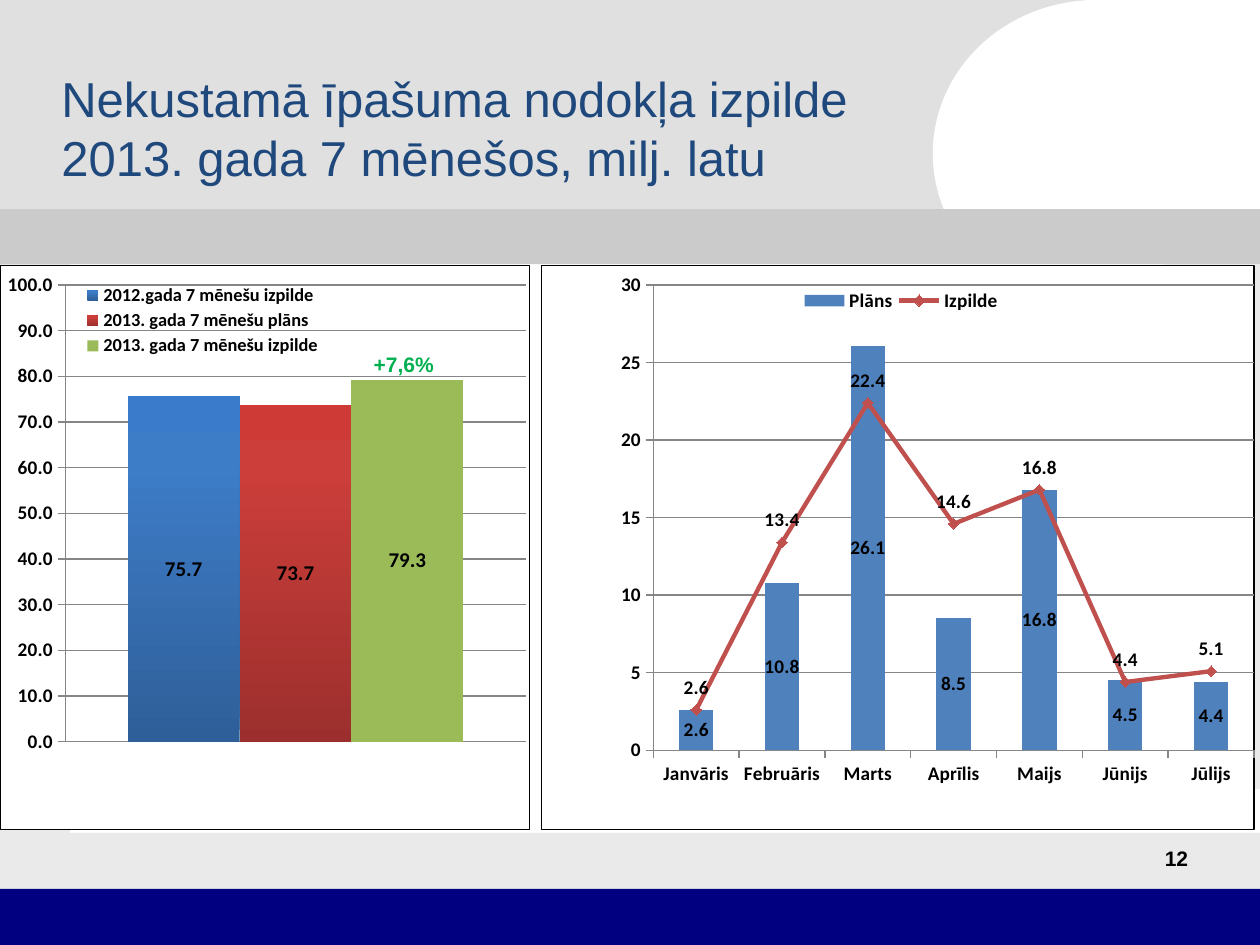
from copy import deepcopy

from pptx import Presentation
from pptx.chart.data import CategoryChartData
from pptx.dml.color import RGBColor
from pptx.enum.chart import (XL_CHART_TYPE, XL_LABEL_POSITION, XL_LEGEND_POSITION,
                             XL_MARKER_STYLE, XL_TICK_MARK)
from pptx.enum.shapes import MSO_SHAPE
from pptx.enum.text import MSO_ANCHOR, PP_ALIGN
from pptx.oxml import parse_xml
from pptx.oxml.ns import nsdecls, qn
from pptx.util import Pt


def color(value):
    return RGBColor.from_string(value)


def layout(left, top, width, height, target=""):
    return parse_xml(
        f'<c:layout {nsdecls("c")}><c:manualLayout>{target}'
        '<c:xMode val="edge"/><c:yMode val="edge"/>'
        f'<c:x val="{left}"/><c:y val="{top}"/><c:w val="{width}"/><c:h val="{height}"/>'
        '</c:manualLayout></c:layout>')


deck = Presentation()
deck.slide_width, deck.slide_height = Pt(720), Pt(540)
page = deck.slides.add_slide(deck.slide_layouts[6])

backdrop = [
    (MSO_SHAPE.RECTANGLE, 0, 0, 654.5, 121.5, "E0E0E0"),
    (MSO_SHAPE.OVAL, 533, 0, 187, 175.5, "FFFFFF"),
    (MSO_SHAPE.RECTANGLE, 0, 151, 40, 357, "EAEAEA"),
    (MSO_SHAPE.RECTANGLE, 19, 476, 701, 32, "EAEAEA"),
    (MSO_SHAPE.RECTANGLE, 0, 508, 720, 32, "000080"),
    (MSO_SHAPE.RECTANGLE, 665, 151, 55, 300, "EAEAEA"),
    (MSO_SHAPE.RECTANGLE, 620.5, 0, 99.5, 145.5, "FFFFFF"),
    (MSO_SHAPE.RECTANGLE, 0, 119.5, 720, 31.5, "CBCBCB"),
]
for kind, left, top, width, height, fill in backdrop:
    shape = page.shapes.add_shape(kind, Pt(left), Pt(top), Pt(width), Pt(height))
    shape.shadow.inherit = False
    shape.fill.solid()
    shape.fill.fore_color.rgb = color(fill)
    shape.line.fill.background()

year_data = CategoryChartData(number_format="0.0")
year_data.categories = ["1"]
year_data.add_series("2012.gada 7 mēnešu izpilde", [75.7])
year_data.add_series("2013. gada 7 mēnešu plāns", [73.7])
year_data.add_series("2013. gada 7 mēnešu izpilde", [79.3])

month_data = CategoryChartData(number_format="General")
month_data.categories = ["Janvāris", "Februāris", "Marts", "Aprīlis", "Maijs", "Jūnijs", "Jūlijs"]
month_data.add_series("Plāns", [2.6, 10.8, 26.1, 8.5, 16.8, 4.5, 4.4])
month_data.add_series("Izpilde", [2.6, 13.4, 22.4, 14.6, 16.8, 4.4, 5.1])

chart_specs = [
    (year_data, (0, 151.25, 303, 323), 112, 100, 10, "0.0", 10.5,
     (0.122, 0.035, 0.871, 0.81), (0.147, 0.028, 0.47, 0.14)),
    (month_data, (309, 151.25, 408, 323), 150, 30, 5, "General", 11,
     (0.157, 0.035, 0.843, 0.825), (0.36, 0.035, 0.29, 0.055)),
]
charts = []
for data, place, gap, top_value, step, number_format, legend_size, plot_place, legend_place in chart_specs:
    chart = page.shapes.add_chart(
        XL_CHART_TYPE.COLUMN_CLUSTERED, *[Pt(length) for length in place], data).chart
    charts.append(chart)
    chart.has_title = False
    chart.font.name = "Calibri"
    chart.font.size = Pt(11)
    chart.font.bold = True
    chart.font.color.rgb = color("000000")
    chart.plots[0].gap_width = gap
    chart.plots[0].vary_by_categories = False
    chart.has_legend = True
    chart.legend.position = XL_LEGEND_POSITION.BOTTOM
    chart.legend.include_in_layout = True
    chart.legend.font.size = Pt(legend_size)
    for old_layout in chart.legend._element.findall(qn("c:layout")):
        chart.legend._element.remove(old_layout)
    chart.legend._element.find(qn("c:overlay")).addprevious(layout(*legend_place))
    chart.value_axis.minimum_scale = 0
    chart.value_axis.maximum_scale = top_value
    chart.value_axis.major_unit = step
    chart.value_axis.tick_labels.number_format = number_format
    chart.value_axis.tick_labels.number_format_is_linked = False
    chart.value_axis.has_major_gridlines = True
    for line in (chart.value_axis.major_gridlines.format.line,
                 chart.value_axis.format.line, chart.category_axis.format.line):
        line.color.rgb = color("868686")
        line.width = Pt(0.75)
    for axis in (chart.value_axis, chart.category_axis):
        axis.major_tick_mark = XL_TICK_MARK.OUTSIDE
        axis.minor_tick_mark = XL_TICK_MARK.NONE
    plot_area = chart._chartSpace.chart.plotArea
    for old_layout in plot_area.findall(qn("c:layout")):
        plot_area.remove(old_layout)
    plot_area.insert(0, layout(*plot_place, '<c:layoutTarget val="inner"/>'))
    chart._chartSpace.chart.addnext(parse_xml(
        f'<c:spPr {nsdecls("c", "a")}><a:solidFill><a:srgbClr val="FFFFFF"/></a:solidFill>'
        '<a:ln w="9525"><a:solidFill><a:srgbClr val="000000"/></a:solidFill></a:ln></c:spPr>'))

year_chart, month_chart = charts
year_chart.category_axis.visible = False

bar_plot = month_chart._chartSpace.chart.plotArea.find(qn("c:barChart"))
line_plot = parse_xml(
    f'<c:lineChart {nsdecls("c")}><c:grouping val="standard"/><c:varyColors val="0"/>'
    '<c:marker val="1"/></c:lineChart>')
moved = bar_plot.findall(qn("c:ser"))[1]
for bar_setting in moved.findall(qn("c:invertIfNegative")):
    moved.remove(bar_setting)
line_plot.insert(2, moved)
for axis_id in bar_plot.findall(qn("c:axId")):
    line_plot.append(deepcopy(axis_id))
bar_plot.addnext(line_plot)

planned = month_chart.plots[0].series[0]
actual = month_chart.plots[1].series[0]
before, target, result = year_chart.plots[0].series

for series, fill in ((result, "9BBB59"), (planned, "4F81BD")):
    series.format.fill.solid()
    series.format.fill.fore_color.rgb = color(fill)

gradients = [(before, ("2F5F99", "3D7CC7", "3A7CCB")), (target, ("9C2F2D", "CB3E3A", "CE3B37"))]
for series, shades in gradients:
    fill = series.format.fill
    fill.gradient()
    fill.gradient_angle = 90
    stop_list = next(series._element.iter(qn("a:gsLst")))
    stop_list.append(deepcopy(stop_list[-1]))
    for stop, position, shade in zip(fill.gradient_stops, (0, 0.8, 1), shades):
        stop.position = position
        stop.color.rgb = color(shade)

actual.smooth = False
actual.format.line.color.rgb = color("C0504D")
actual.format.line.width = Pt(2.5)
actual.marker.style = XL_MARKER_STYLE.DIAMOND
actual.marker.size = 6
actual.marker.format.fill.solid()
actual.marker.format.fill.fore_color.rgb = color("C0504D")
actual.marker.format.line.color.rgb = color("C0504D")

label_specs = [(series, XL_LABEL_POSITION.CENTER, "0.0", 12) for series in (before, target, result)]
label_specs += [(planned, XL_LABEL_POSITION.CENTER, "General", 11),
                (actual, XL_LABEL_POSITION.ABOVE, "#,##0.0", 11)]
for series, position, number_format, size in label_specs:
    labels = series.data_labels
    labels.show_value = True
    labels.position = position
    labels.number_format = number_format
    labels.number_format_is_linked = False
    labels.font.name = "Calibri"
    labels.font.size = Pt(size)
    labels.font.bold = True
    labels.font.color.rgb = color("000000")

texts = [
    ("Nekustamā īpašuma nodokļa izpilde \v2013. gada 7 mēnešos, milj. latu",
     (28, 28, 540, 90), 28, "1F497D", False, PP_ALIGN.LEFT, MSO_ANCHOR.MIDDLE),
    ("12", (523.5, 479.5, 162.5, 36), 12, "000000", True, PP_ALIGN.RIGHT, MSO_ANCHOR.TOP),
    ("+7,6%", (206.5, 197.5, 71.5, 21.5), 12, "00B050", True, PP_ALIGN.LEFT, MSO_ANCHOR.TOP),
]
for text, place, size, ink, bold, align, anchor in texts:
    box = page.shapes.add_textbox(*[Pt(length) for length in place])
    box.text_frame.word_wrap = True
    box.text_frame.vertical_anchor = anchor
    para = box.text_frame.paragraphs[0]
    para.text = text
    para.alignment = align
    para.font.name = "Arial"
    para.font.size = Pt(size)
    para.font.bold = bold
    para.font.color.rgb = color(ink)

deck.save("out.pptx")
